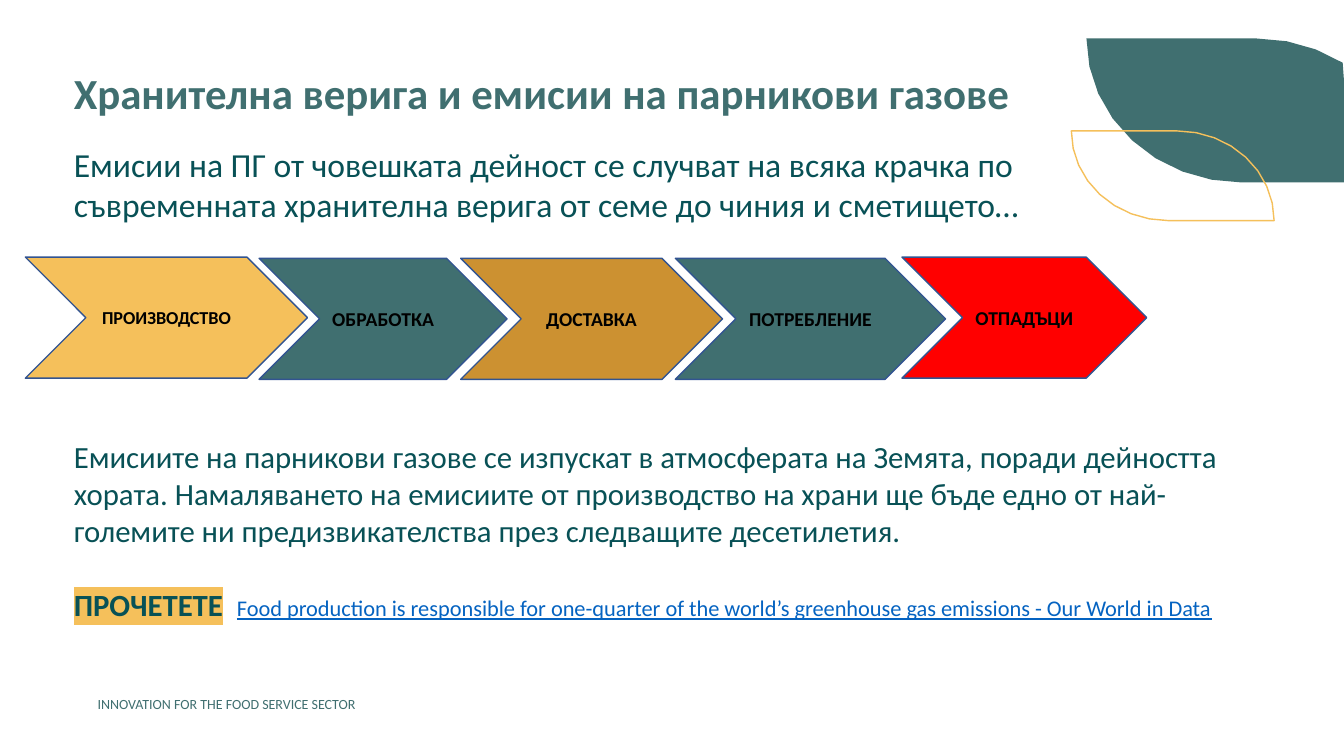
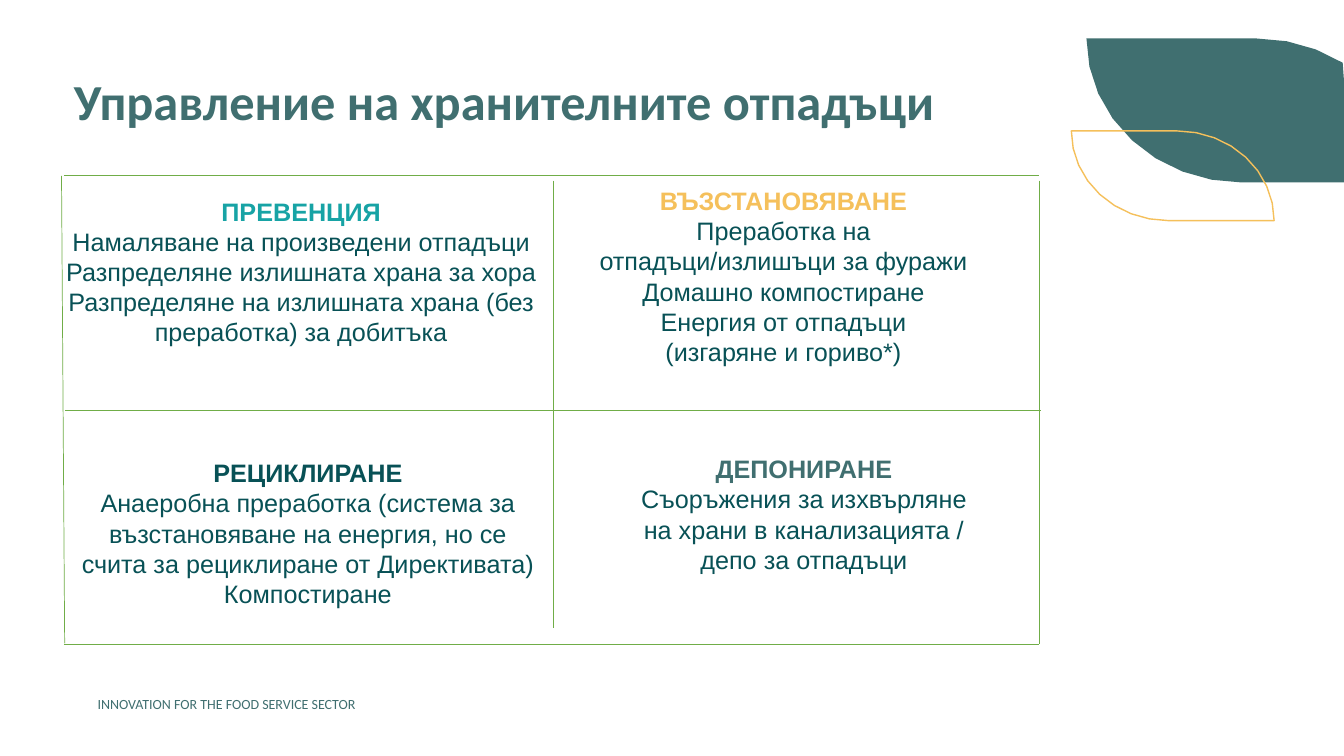
from math import cos, pi, sin

from lxml.etree import SubElement
from pptx import Presentation
from pptx.dml.color import RGBColor
from pptx.enum.shapes import MSO_CONNECTOR as CONNECTOR, MSO_SHAPE as SHAPE
from pptx.enum.text import MSO_ANCHOR as ANCHOR, PP_ALIGN as ALIGN
from pptx.oxml.ns import qn
from pptx.util import Cm, Pt

SLIDE_W, SLIDE_H = 33.87, 19.05
LEFT = 1.61
GREEN, DARK, YELLOW = "406F70", "085156", "F5C05B"
TEAL, OCHRE, RED = "17A3A5", "CC9131", "FF0000"
OUTLINE, GRID, LINK, BLACK = "325491", "70AD47", "0563C1", "000000"


def color(code):
    return RGBColor.from_string(code)


def style(p, size, code, bold=False, name="Calibri", align=ALIGN.LEFT):
    p.alignment = align
    f = p.font
    f.name, f.size, f.bold = name, Pt(size), bold
    f.color.rgb = color(code)


def add_text_frame(s, x, y, w, h):
    tf = s.shapes.add_textbox(Cm(x), Cm(y), Cm(w), Cm(h)).text_frame
    tf.word_wrap = True
    return tf


def add_text(s, box, text, size, code, bold=False):
    tf = add_text_frame(s, *box)
    p = tf.paragraphs[0]
    p.text = text
    style(p, size, code, bold)
    return tf


def add_leaf(s, x, y, w, h):
    """Two opposite pointed corners and two elliptical ones, cut at the slide edge."""
    rx, steps = 0.478 * w, 8
    angles = [pi / 2 * i / steps for i in range(steps + 1)]
    upper = [(x + w - rx + rx * sin(a), y + h - h * cos(a)) for a in angles]
    lower = [(2 * x + w - px, 2 * y + h - py) for px, py in upper]
    points = [(Cm(min(px, SLIDE_W)), Cm(py)) for px, py in upper + lower]
    builder = s.shapes.build_freeform(*points[0], scale=1.0)
    builder.add_line_segments(points[1:], close=True)
    sp = builder.convert_to_shape()
    sp.shadow.inherit = False
    return sp


def add_base(prs, title, size, spacing, y):
    """Blank slide with the shared leaves, footer and title."""
    s = prs.slides.add_slide(prs.slide_layouts[6])
    leaf = add_leaf(s, 27.38, 0.97, 8.2, 3.63)
    leaf.fill.solid()
    leaf.fill.fore_color.rgb = color(GREEN)
    leaf.line.fill.background()
    leaf = add_leaf(s, 27, 3.3, 5.11, 2.26)
    leaf.fill.background()
    leaf.line.color.rgb = color(YELLOW)
    leaf.line.width = Pt(1)
    add_text(s, (2.21, 17.4, 29.44, 0.69),
             "INNOVATION FOR THE FOOD SERVICE SECTOR", 10, GREEN)
    tf = add_text(s, (LEFT, y, 24.61, 2.18), title, size, GREEN, True)
    tf.paragraphs[0].line_spacing = spacing
    return s


def add_chevron(s, x, y, w, text, size, code):
    sp = s.shapes.add_shape(SHAPE.CHEVRON, Cm(x), Cm(y), Cm(w), Cm(3.05))
    sp.shadow.inherit = False
    sp.fill.solid()
    sp.fill.fore_color.rgb = color(code)
    sp.line.color.rgb = color(OUTLINE)
    sp.line.width = Pt(1)
    tf = sp.text_frame
    tf.vertical_anchor = ANCHOR.MIDDLE
    p = tf.paragraphs[0]
    p.text = text
    style(p, size, BLACK, True, align=ALIGN.CENTER)


def add_reading(tf, label, source):
    """Highlighted label, then the underlined source after a tab stop."""
    p = tf.add_paragraph()
    p.space_before = Pt(26.5)
    tabs = SubElement(p._p.get_or_add_pPr(), qn("a:tabLst"))
    SubElement(tabs, qn("a:tab"), pos=str(Cm(4.11)), algn="l")
    style(p, 22, DARK)
    r = p.add_run()
    r.text = label
    r.font.bold = True
    mark = SubElement(r._r.get_or_add_rPr(), qn("a:highlight"))
    SubElement(mark, qn("a:srgbClr"), val=YELLOW)
    p.add_run().text = "\t"
    r = p.add_run()
    r.text = source
    r.font.size = Pt(16)
    r.font.underline = True
    r.font.color.rgb = color(LINK)


def add_line(s, x1, y1, x2, y2):
    line = s.shapes.add_connector(CONNECTOR.STRAIGHT, Cm(x1), Cm(y1), Cm(x2), Cm(y2))
    line.line.color.rgb = color(GRID)
    line.line.width = Pt(0.5)
    SubElement(line._element.spPr, qn("a:effectLst"))


def add_quadrant(s, box, code, heading, *items):
    tf = add_text_frame(s, *box)
    for i, text in enumerate((heading, *items)):
        p = tf.add_paragraph() if i else tf.paragraphs[0]
        p.text = text
        style(p, 18, DARK if i else code, i == 0, "Arial", ALIGN.CENTER)


def build_food_chain(prs):
    s = add_base(prs, "Хранителна верига и емисии на парникови газове", 30.6, 0.8, 1.8)
    for x, y, w, text, size, code in (
        (0.64, 6.48, 7.11, "ПРОИЗВОДСТВО", 13, YELLOW),
        (6.53, 6.51, 6.25, "ОБРАБОТКА", 14, GREEN),
        (11.61, 6.51, 6.6, "ДОСТАВКА", 14, OCHRE),
        (17.02, 6.51, 6.81, "ПОТРЕБЛЕНИЕ", 14, GREEN),
        (22.73, 6.48, 6.17, "ОТПАДЪЦИ", 14, RED),
    ):
        add_chevron(s, x, y, w, text, size, code)
    add_text(s, (LEFT, 3.5, 25.45, 2.31),
             "Емисии на ПГ от човешката дейност се случват на всяка крачка по "
             "съвременната хранителна верига от семе до чиния и сметището…", 24, DARK)
    tf = add_text(s, (LEFT, 10.9, 29.69, 4.95),
                  "Емисиите на парникови газове се изпускат в атмосферата на Земята, "
                  "поради дейността хората. Намаляването на емисиите от производство "
                  "на храни ще бъде едно от най-големите ни предизвикателства през "
                  "следващите десетилетия.", 22, DARK)
    add_reading(tf, "ПРОЧЕТЕТЕ",
                "Food production is responsible for one-quarter of the world’s "
                "greenhouse gas emissions - Our World in Data")


def build_waste_management(prs):
    s = add_base(prs, "Управление на хранителните отпадъци", 36, 0.9, 1.82)
    add_quadrant(s, (1.29, 4.81, 12.6, 4.88), TEAL, "ПРЕВЕНЦИЯ",
                 "Намаляване на произведени отпадъци Разпределяне излишната храна за хора",
                 "Разпределяне на излишната храна (без преработка) за добитъка")
    add_quadrant(s, (1.64, 11.4, 12.24, 4.88), DARK, "РЕЦИКЛИРАНЕ",
                 "Анаеробна преработка (система за възстановяване на енергия, но се "
                 "счита за рециклиране от Директивата)",
                 "Компостиране")
    add_quadrant(s, (14.79, 4.54, 9.91, 5.64), YELLOW, "ВЪЗСТАНОВЯВАНЕ",
                 "Преработка на отпадъци/излишъци за фуражи",
                 "Домашно компостиране",
                 "Енергия от отпадъци\v(изгаряне и гориво*)")
    add_quadrant(s, (15.83, 11.3, 8.86, 3.33), GREEN, "ДЕПОНИРАНЕ",
                 "Съоръжения за изхвърляне на храни в канализацията / депо за отпадъци")
    left, right, top, bottom = 1.61, 26.19, 4.43, 16.23
    for ends in (
        (1.55, top, 1.63, 16.21),
        (13.94, 4.55, 13.94, 15.82),
        (right, 4.55, right, bottom),
        (left, top, right, top),
        (left, bottom, right, bottom),
        (1.65, 10.35, 26.24, 10.35),
    ):
        add_line(s, *ends)


def main():
    prs = Presentation()
    prs.slide_width, prs.slide_height = Cm(SLIDE_W), Cm(SLIDE_H)
    build_food_chain(prs)
    build_waste_management(prs)
    prs.save("out.pptx")


if __name__ == "__main__":
    main()
